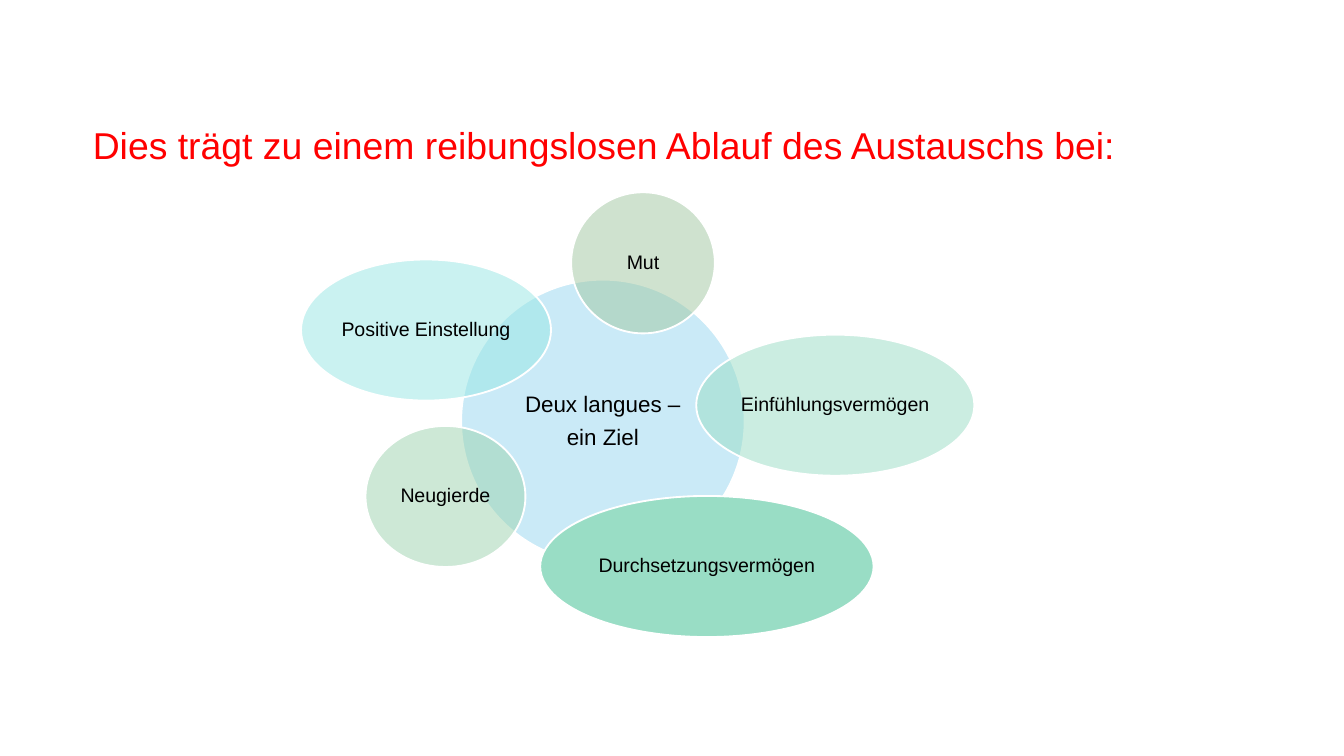
from lxml.etree import SubElement
from pptx import Presentation
from pptx.dml.color import RGBColor
from pptx.enum.shapes import MSO_SHAPE as Shape
from pptx.enum.text import MSO_ANCHOR as Anchor, MSO_AUTO_SIZE as AutoSize, PP_ALIGN as Align
from pptx.oxml.ns import qn
from pptx.util import Pt

TITLE = "Dies trägt zu einem reibungslosen Ablauf des Austauschs bei:"
TITLE_AREA = (49.7, 63.4, 648.7, 31.7)
HUB_LINES = ["Deux langues –", "ein Ziel"]
HUB_AREA = (247, 149.8, 151.9, 151.9)
PETAL_HEIGHT = 75.6
# label, left, top, width, fill, opacity in percent
PETALS = [
    ("Positive Einstellung", 161.3, 139, 133.9, "97E7E4", 50),
    ("Einfühlungsvermögen", 373, 179.3, 149, "99DDC5", 50),
    ("Neugierde", 195.8, 228.2, 85.7, "9CD3AE", 50),
    ("Mut", 306, 103, 77, "A0C7A0", 50),
    ("Durchsetzungsvermögen", 289.4, 265.7, 178.6, "99DDC5", 100),
]


def colour(target, value):
    target.rgb = RGBColor.from_string(value)


def add_span(para, text, size, shade):
    span = para.add_run()
    span.text = text
    span.font.size = Pt(size)
    span.font.name = "Arial"
    colour(span.font.color, shade)


def set_margins(frame, side, top):
    frame.margin_left = frame.margin_right = Pt(side)
    frame.margin_top = frame.margin_bottom = Pt(top)


def add_ellipse(slide, area, lines, size, fill, opacity):
    ellipse = slide.shapes.add_shape(Shape.OVAL, *map(Pt, area))
    ellipse.shadow.inherit = False
    ellipse.fill.solid()
    colour(ellipse.fill.fore_color, fill)
    if opacity < 100:
        tint = ellipse.fill._xPr.find(qn("a:solidFill"))[0]
        SubElement(tint, qn("a:alpha"), val=str(opacity * 1000))
    colour(ellipse.line.color, "FFFFFF")
    ellipse.line.width = Pt(1)

    frame = ellipse.text_frame
    frame.word_wrap = True
    frame.vertical_anchor = Anchor.MIDDLE
    set_margins(frame, 1.4, 1.4)
    for index, line in enumerate(lines):
        para = frame.add_paragraph() if index else frame.paragraphs[0]
        para.alignment = Align.CENTER
        para.line_spacing = 0.9
        para.space_after = Pt(size * 0.38)
        add_span(para, line, size, "000000")


deck = Presentation()
deck.slide_width, deck.slide_height = Pt(720), Pt(405)
slide = deck.slides.add_slide(deck.slide_layouts[5])

title = slide.shapes.title
title.left, title.top, title.width, title.height = map(Pt, TITLE_AREA)
frame = title.text_frame
frame.auto_size = AutoSize.NONE
frame.word_wrap = True
frame.vertical_anchor = Anchor.TOP
set_margins(frame, 0, 2)
para = frame.paragraphs[0]
para.alignment = Align.LEFT
para.space_before = Pt(0)
add_span(para, TITLE, 20, "FF0000")

add_ellipse(slide, HUB_AREA, HUB_LINES, 12, "96D7F0", 50)
for label, left, top, width, fill, opacity in PETALS:
    add_ellipse(slide, (left, top, width, PETAL_HEIGHT), [label], 10.5, fill, opacity)

deck.save("out.pptx")
